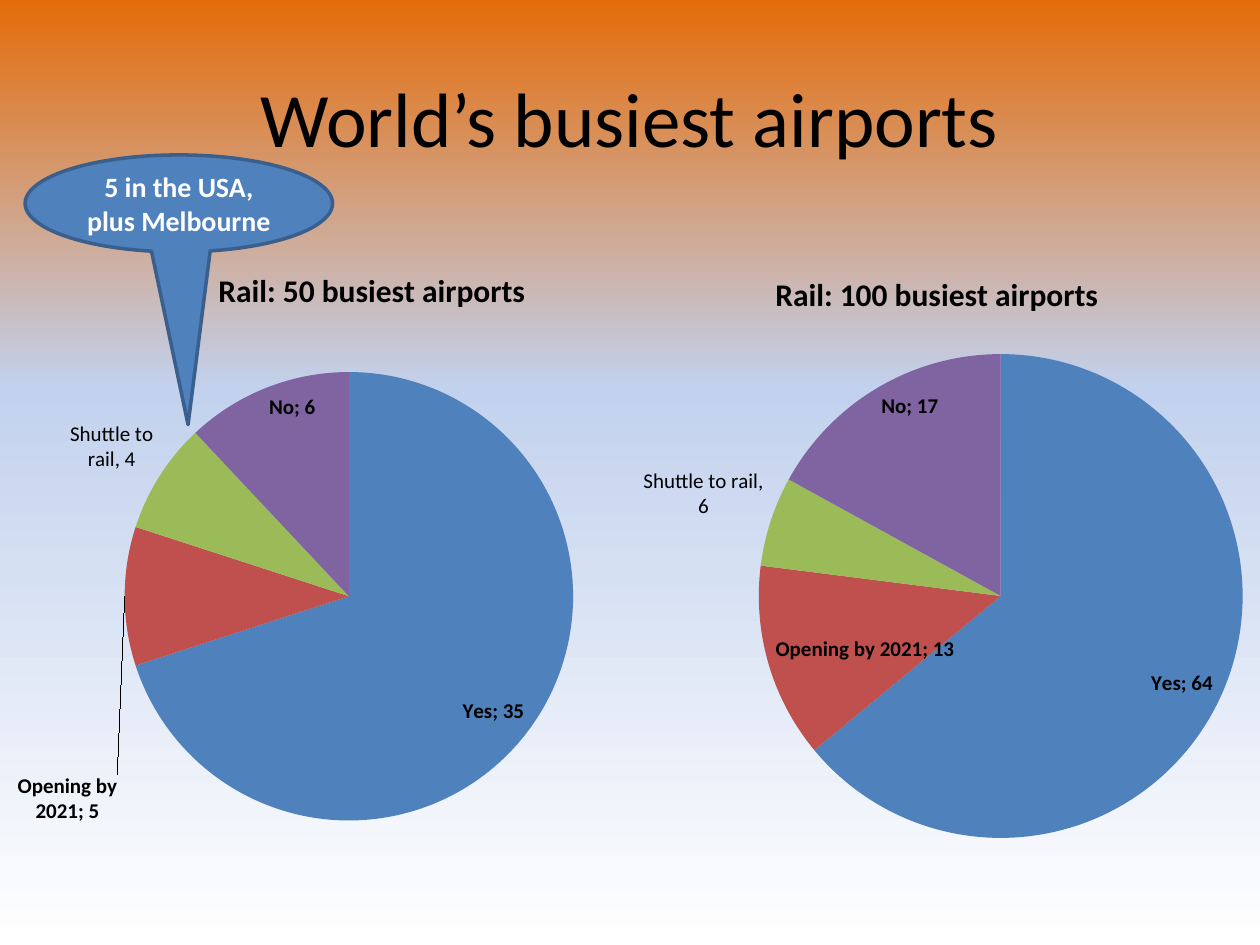
"""Build the slide on rail links at the busiest airports."""
from copy import deepcopy

from lxml import etree
from pptx import Presentation
from pptx.chart.data import CategoryChartData
from pptx.dml.color import RGBColor
from pptx.enum.chart import XL_CHART_TYPE, XL_LABEL_POSITION
from pptx.enum.shapes import MSO_SHAPE
from pptx.enum.text import MSO_ANCHOR, PP_ALIGN
from pptx.oxml.ns import qn
from pptx.util import Inches, Pt

PIE = XL_CHART_TYPE.PIE
INSIDE = XL_LABEL_POSITION.INSIDE_END
OUTSIDE = XL_LABEL_POSITION.OUTSIDE_END
BALLOON = MSO_SHAPE.OVAL_CALLOUT
MIDDLE = MSO_ANCHOR.MIDDLE
CENTER = PP_ALIGN.CENTER

FONT = "Calibri"
BLACK, WHITE, BLUE, NAVY = "000000", "FFFFFF", "4F81BD", "3A5F8C"
SKY = [(0, "E46C0A"), (41, "C2D1ED"), (100, WHITE)]
TITLE = "World’s busiest airports"
NOTE = ["5 in the USA,", "plus Melbourne"]
CATS = ["Yes", "Opening by 2021", "Shuttle", "No"]
HUES = [BLUE, "C0504D", "9BBB59", "8064A2"]
OPEN, BUS = 1, 2
PIES = [
    {"title": "Rail: 50 busiest airports", "vals": [35, 5, 4, 6],
     "box": (0, 2.02, 4.69, 4.88), "head": (1.69, 2.09),
     "disc": (0.99, 2.95, 3.56), "drop": 1.61},
    {"title": "Rail: 100 busiest airports", "vals": [64, 13, 6, 17],
     "box": (4.92, 2.02, 5.08, 4.88), "head": (6.11, 2.12),
     "disc": (6.02, 2.81, 3.84), "drop": 0},
]


def color(code):
    return RGBColor.from_string(code)


def style(font, size, hue=BLACK, bold=False):
    font.name, font.size, font.bold = FONT, Pt(size), bold
    font.color.rgb = color(hue)


def write(frame, lines, size, hue=BLACK, bold=False):
    frame.word_wrap = True
    frame.vertical_anchor = MIDDLE
    for i, line in enumerate(lines):
        para = frame.add_paragraph() if i else frame.paragraphs[0]
        para.alignment = CENTER
        run = para.add_run()
        run.text = line
        style(run.font, size, hue, bold)


def place(node, spot, **parts):
    for old in node.findall(qn("c:layout")):
        node.remove(old)
    layout = etree.Element(qn("c:layout"))
    manual = etree.SubElement(layout, qn("c:manualLayout"))
    for tag, val in parts.items():
        etree.SubElement(manual, qn("c:" + tag)).set("val", str(val))
    node.insert(spot, layout)


def join(node):
    for tag in ("c:showVal", "c:showCatName"):
        node.find(qn(tag)).set("val", "1")
    mark = etree.Element(qn("c:separator"))
    mark.text = "; "
    node.find(qn("c:showBubbleSize")).addnext(mark)


def paint(slide):
    fill = slide.background.fill
    fill.gradient()
    fill.gradient_angle = 270
    stops = slide.background._cSld.find(".//" + qn("a:gsLst"))
    stops.append(deepcopy(stops[-1]))
    for stop, (pos, hue) in zip(fill.gradient_stops, SKY):
        stop.position = pos / 100
        stop.color.rgb = color(hue)


def draw(slide, pie):
    left, top, wide, high = pie["box"]
    data = CategoryChartData()
    data.categories = CATS
    data.add_series("Series 1", pie["vals"])
    chart = slide.shapes.add_chart(PIE, *map(Inches, pie["box"]), data).chart
    style(chart.font, 10)
    chart.has_legend = False

    run = chart.chart_title.text_frame.paragraphs[0].add_run()
    run.text = pie["title"]
    style(run.font, 18, bold=True)
    x, y = pie["head"]
    place(chart.chart_title._element, 1, xMode="edge", yMode="edge",
          x=round((x - left) / wide, 3), y=round((y - top) / high, 3))
    x, y, size = pie["disc"]
    area = chart._chartSpace.find(".//" + qn("c:plotArea"))
    place(area, 0, layoutTarget="inner", xMode="edge", yMode="edge",
          x=round((x - left) / wide, 3), y=round((y - top) / high, 3),
          w=round(size / wide, 3), h=round(size / high, 3))

    series = chart.plots[0].series[0]
    for i, hue in enumerate(HUES):
        fill = series.points[i].format.fill
        fill.solid()
        fill.fore_color.rgb = color(hue)
    labels = series.data_labels
    labels.position = INSIDE
    style(labels.font, 12, bold=True)
    join(labels._element)

    label = series.points[BUS].data_label
    write(label.text_frame, [f"Shuttle to rail, {pie['vals'][BUS]}"], 12)
    label.position = OUTSIDE
    if pie["drop"]:
        label = series.points[OPEN].data_label
        style(label.font, 12, bold=True)
        label.position = OUTSIDE
        node = labels._element.find(qn("c:dLbl"))
        place(node, 1, x=0, y=round(pie["drop"] / high, 2))
        join(node)


def main():
    deck = Presentation()
    deck.slide_width, deck.slide_height = Inches(10), Inches(7.5)
    slide = deck.slides.add_slide(deck.slide_layouts[6])
    paint(slide)
    box = slide.shapes.add_textbox(*map(Inches, (0.5, 0.3, 9, 1.25)))
    write(box.text_frame, [TITLE], 44)
    for pie in PIES:
        draw(slide, pie)
    note = slide.shapes.add_shape(BALLOON, *map(Inches, (0.2, 1.23, 2.44, 0.77)))
    note.shadow.inherit = False
    note.adjustments[0], note.adjustments[1] = 0.03, 2.28
    note.fill.solid()
    note.fill.fore_color.rgb = color(BLUE)
    note.line.color.rgb = color(NAVY)
    note.line.width = Pt(2)
    write(note.text_frame, NOTE, 16, WHITE, True)
    deck.save("out.pptx")


if __name__ == "__main__":
    main()
